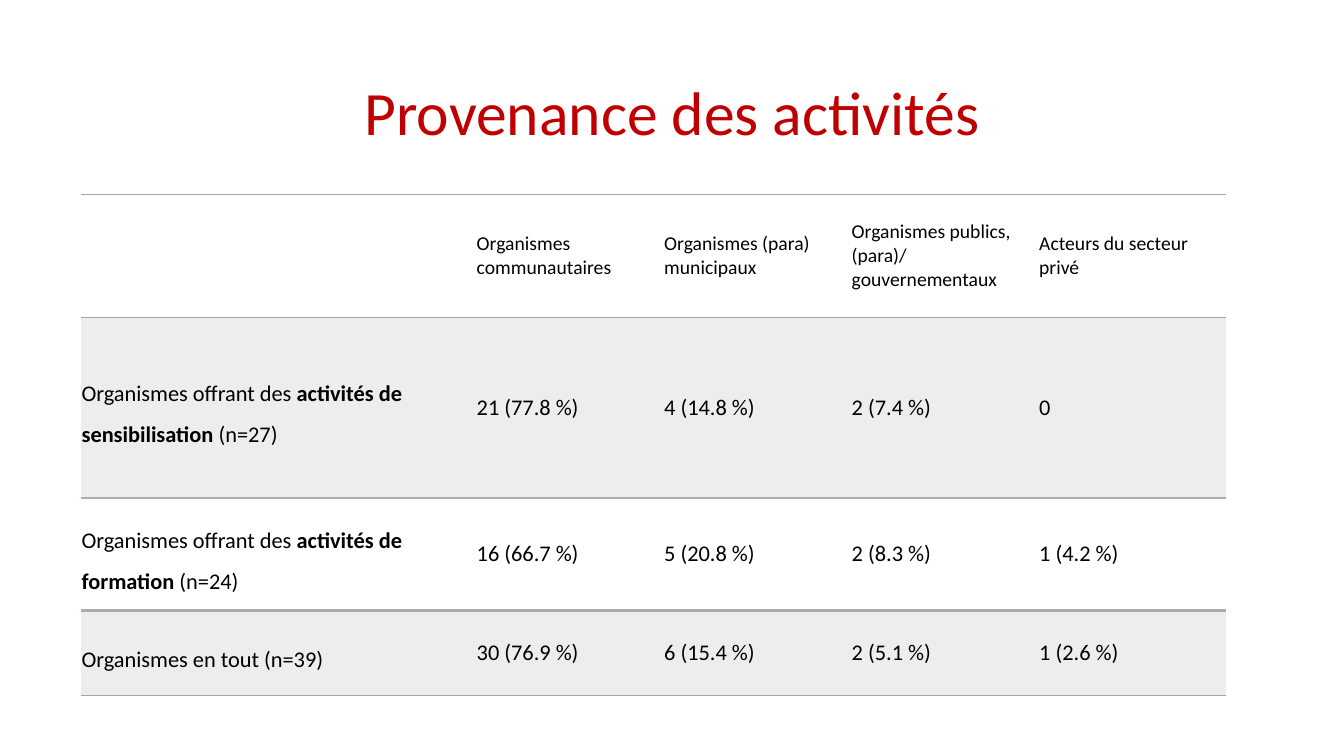
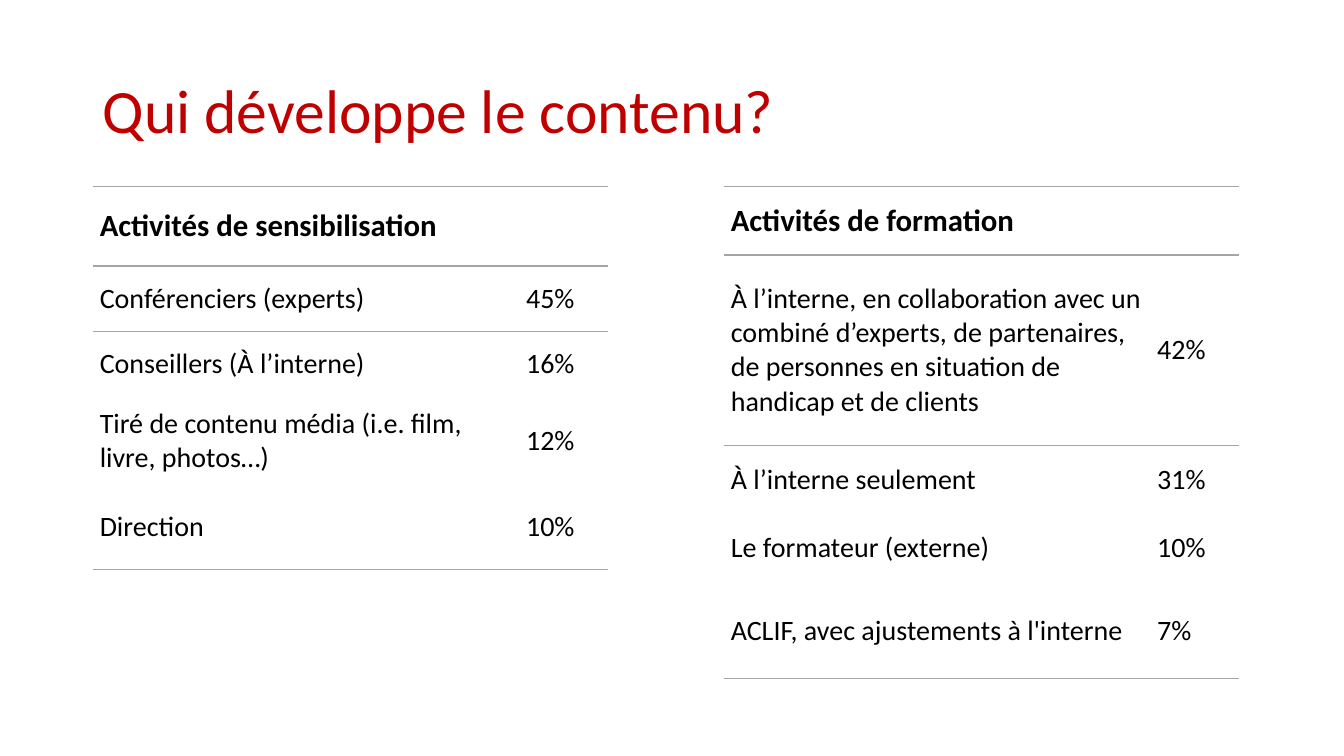
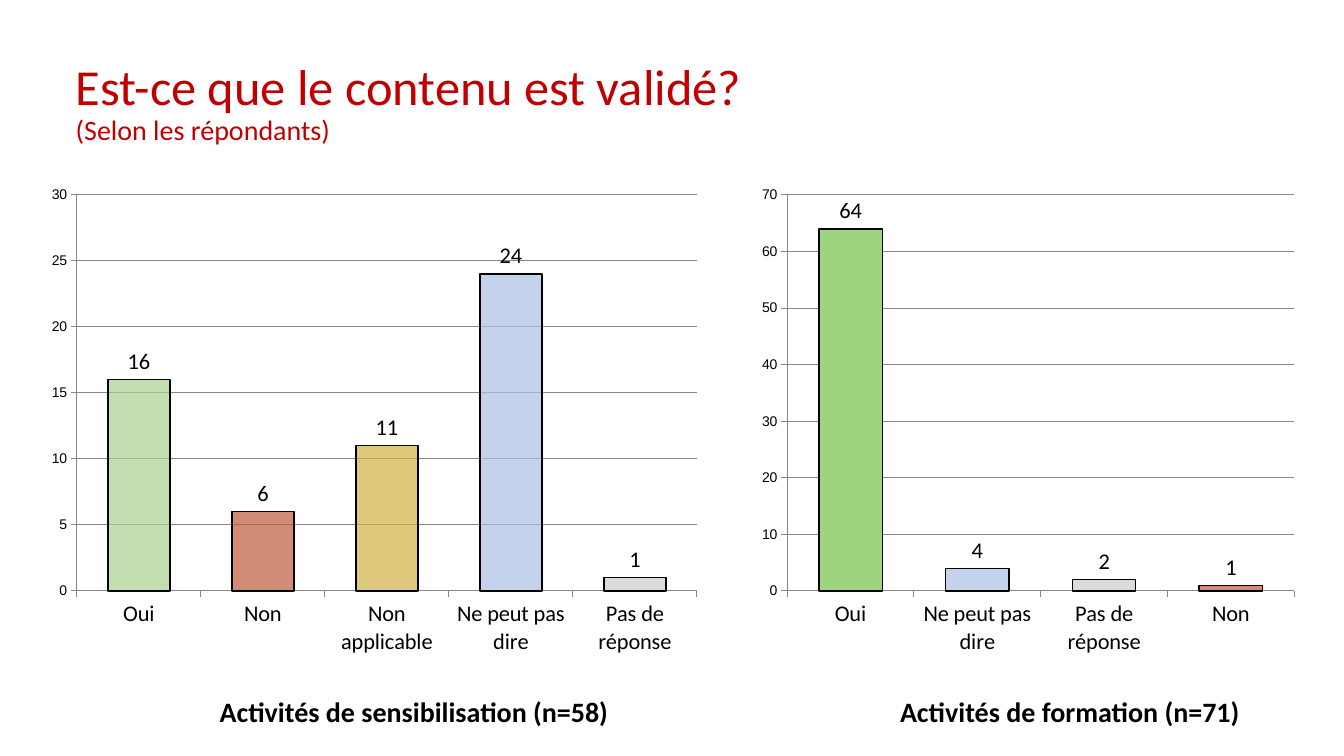
from lxml.etree import SubElement
from pptx import Presentation
from pptx.chart.data import CategoryChartData
from pptx.dml.color import RGBColor
from pptx.enum.chart import XL_CHART_TYPE, XL_LABEL_POSITION, XL_TICK_MARK
from pptx.enum.text import MSO_ANCHOR, MSO_AUTO_SIZE, PP_ALIGN
from pptx.oxml import parse_xml
from pptx.oxml.ns import nsdecls, qn
from pptx.util import Inches, Pt

WIDTH, HEIGHT = Inches(13.33), Inches(7.5)
COLUMN, ROW = WIDTH / 40, HEIGHT / 30

RED = RGBColor(0xC0, 0x00, 0x00)
BLACK = RGBColor(0x00, 0x00, 0x00)
RULE_GRAY = RGBColor(0xA5, 0xA5, 0xA5)
WARM_GRAY = RGBColor(0xAF, 0xAB, 0xAB)
BAND_GRAY = RGBColor(0xED, 0xED, 0xED)
AXIS_GRAY = RGBColor(0x87, 0x87, 0x87)
GREEN = RGBColor(0x9E, 0xD3, 0x7F)
SOFT_GREEN = RGBColor(0xA9, 0xD1, 0x8E)
BRICK = RGBColor(0xBF, 0x5C, 0x3B)
GOLD = RGBColor(0xCF, 0xB2, 0x45)
BLUE = RGBColor(0xAD, 0xC0, 0xE3)
SILVER = RGBColor(0xCC, 0xCC, 0xCC)

PLAIN_TABLE_STYLE = "{2D5ABB26-0587-4C30-8999-92F81FD0307C}"
THIN, THICK = (RULE_GRAY, 1), (WARM_GRAY, 2.25)


def write(frame, text, size=20, color=BLACK, bold=False, align=PP_ALIGN.LEFT, spacing=None):
    """Fill a text frame: newlines part paragraphs, ** toggles bold."""
    for index, line in enumerate(text.split("\n")):
        para = frame.add_paragraph() if index else frame.paragraphs[0]
        para.alignment, para.line_spacing = align, spacing
        for position, words in enumerate(line.split("**")):
            if words:
                span = para.add_run()
                span.text = words
                span.font.name, span.font.size = "Calibri", Pt(size)
                span.font.color.rgb = color
                span.font.bold = bold or position % 2 == 1


def add_ruled_table(page, left, top, widths, heights, rows, rules, head, body,
                    margin, banded=False, spacing=None):
    """Add a table whose horizontal rules are keyed by row edge, 0 being the top."""
    holder = page.shapes.add_table(
        len(rows), len(widths), int(left * COLUMN), int(top * ROW),
        int(sum(widths) * COLUMN), int(sum(heights) * ROW))
    next(holder.element.iter(qn("a:tableStyleId"))).text = PLAIN_TABLE_STYLE
    table = holder.table
    table.horz_banding = False
    for column, width in zip(table.columns, widths):
        column.width = int(width * COLUMN)
    for r, texts in enumerate(rows):
        table.rows[r].height = int(heights[r] * ROW)
        for c, text in enumerate(texts):
            cell = table.cell(r, c)
            cell.vertical_anchor = MSO_ANCHOR.MIDDLE
            cell.margin_left = cell.margin_right = Inches(margin)
            cell.margin_top = cell.margin_bottom = 0
            write(cell.text_frame, text, spacing=spacing if r and not c else None,
                  **(body if r else head))
            if banded and r % 2:
                cell.fill.solid()
                cell.fill.fore_color.rgb = BAND_GRAY
            else:
                cell.fill.background()
            properties = cell._tc.get_or_add_tcPr()
            for side, edge in (("lnB", r + 1), ("lnT", r)):
                if edge in rules:
                    color, points = rules[edge]
                    properties.insert(0, parse_xml(
                        f'<a:{side} {nsdecls("a")} w="{Pt(points)}"><a:solidFill>'
                        f'<a:srgbClr val="{color}"/></a:solidFill></a:{side}>'))


deck = Presentation()
deck.slide_width, deck.slide_height = WIDTH, HEIGHT

# Titles: left, top, width, height in grid units
titles = [
    ("Provenance des activités", 44, PP_ALIGN.CENTER, MSO_ANCHOR.BOTTOM,
     (1.74, 2.04, 36.54, 4.08)),
    ("Qui développe le contenu?", 44, PP_ALIGN.LEFT, MSO_ANCHOR.MIDDLE,
     (2.76, 1.6, 34.5, 5.8)),
    ("Est-ce que le contenu est validé?\n(Selon les répondants)", 36, PP_ALIGN.LEFT,
     MSO_ANCHOR.MIDDLE, (1.95, 1.24, 34.5, 5.8)),
]
pages = []
for text, size, align, anchor, (left, top, width, height) in titles:
    page = deck.slides.add_slide(deck.slide_layouts[5])
    title = page.shapes.title
    title.left, title.top = int(left * COLUMN), int(top * ROW)
    title.width, title.height = int(width * COLUMN), int(height * ROW)
    title.text_frame.auto_size = MSO_AUTO_SIZE.NONE
    title.text_frame.vertical_anchor = anchor
    write(title.text_frame, text, size=size, color=RED, align=align, spacing=0.9)
    pages.append(page)
origin_page, author_page, validation_page = pages
subtitle = validation_page.shapes.title.text_frame.paragraphs[1]
subtitle.runs[0].font.size = Pt(20)

# Where the activities come from
add_ruled_table(
    origin_page, 2.4, 7.72, [11.76] + [5.58] * 4, [4.88, 7.16, 4.48, 3.36],
    [["", "Organismes communautaires", "Organismes (para) municipaux",
      "Organismes publics, (para)/\ngouvernementaux", "Acteurs du secteur privé"],
     ["Organismes offrant des **activités de sensibilisation** (n=27)",
      "21 (77.8 %)", "4 (14.8 %)", "2 (7.4 %)", "0"],
     ["Organismes offrant des **activités de formation **(n=24)",
      "16 (66.7 %)", "5 (20.8 %)", "2 (8.3 %)", "1 (4.2 %)"],
     ["Organismes en tout (n=39)",
      "30 (76.9 %)", "6 (15.4 %)", "2 (5.1 %)", "1 (2.6 %)"]],
    {0: THIN, 1: THIN, 2: THICK, 3: THICK, 4: THIN},
    head={"size": 14}, body={"size": 16}, margin=0.01, banded=True, spacing=1.5)

# Who develops the content
author_tables = [
    (2.76, [3.16, 2.6, 2.6, 3.48, 3.36],
     [["Activités de sensibilisation", ""],
      ["Conférenciers (experts)", "45%"],
      ["Conseillers (À l’interne)", "16%"],
      ["Tiré de contenu média (i.e. film, livre, photos…)", "12%"],
      ["Direction", "10%"]]),
    (21.54, [2.72, 7.56, 2.72, 2.72, 3.8],
     [["Activités de formation", ""],
      ["À l’interne, en collaboration avec un combiné d’experts, de partenaires, "
       "de personnes en situation de handicap et de clients", "42%"],
      ["À l’interne seulement", "31%"],
      ["Le formateur (externe)", "10%"],
      ["ACLIF, avec ajustements à l'interne", "7%"]]),
]
for left, heights, rows in author_tables:
    add_ruled_table(author_page, left, 7.4, [12.69, 2.64], heights, rows,
                    {0: THIN, 1: THIN, 5: THIN},
                    head={"size": 22, "bold": True}, body={"size": 20}, margin=0.07)

# Whether the content is validated: bars are (category, value, colour, opacity)
charts = [
    (1.14, 20, 30, 5, 6.24, 12.3, "Activités de sensibilisation (n=58)",
     [("Oui", 16, SOFT_GREEN, 70), ("Non", 6, BRICK, 70), ("Non applicable", 11, GOLD, 70),
      ("Ne peut pas dire", 24, BLUE, 70), ("Pas de réponse", 1, SILVER, 70)]),
    (22.35, 16.5, 70, 10, 26.49, 10.83, "Activités de formation (n=71)",
     [("Oui", 64, GREEN, 100), ("Ne peut pas dire", 4, BLUE, 70),
      ("Pas de réponse", 2, SILVER, 70), ("Non", 1, BRICK, 70)]),
]
for left, width, maximum, step, caption_left, caption_width, caption, bars in charts:
    data = CategoryChartData()
    data.categories = [bar[0] for bar in bars]
    data.add_series("Series 1", [bar[1] for bar in bars])
    chart = validation_page.shapes.add_chart(
        XL_CHART_TYPE.COLUMN_CLUSTERED, int(left * COLUMN), int(7.04 * ROW),
        int(width * COLUMN), int(19.36 * ROW), data).chart
    chart.has_title = chart.has_legend = False
    chart.font.name, chart.font.size = "Arial", Pt(10)
    chart.font.color.rgb = BLACK

    for axis in (chart.category_axis, chart.value_axis):
        axis.major_tick_mark = XL_TICK_MARK.OUTSIDE
        axis.minor_tick_mark = XL_TICK_MARK.NONE
        axis.format.line.color.rgb = AXIS_GRAY
    axis.minimum_scale, axis.maximum_scale, axis.major_unit = 0, maximum, step
    axis.major_gridlines.format.line.color.rgb = AXIS_GRAY

    plot = chart.plots[0]
    plot.gap_width, plot.vary_by_categories = 100, False
    plot.has_data_labels = True
    labels = plot.data_labels
    labels.show_value, labels.position = True, XL_LABEL_POSITION.OUTSIDE_END
    for font in (labels.font, chart.category_axis.tick_labels.font):
        font.name, font.size = "Calibri", Pt(16)
        font.color.rgb = BLACK

    for index, (_, _, color, opacity) in enumerate(bars):
        look = plot.series[0].points[index].format
        look.fill.solid()
        look.fill.fore_color.rgb = color
        look.line.color.rgb, look.line.width = BLACK, Pt(1)
        if opacity < 100:
            properties = plot.series[0].points[index]._element.findall(
                qn("c:dPt"))[index].find(qn("c:spPr"))
            shade = properties.find(qn("a:solidFill")).find(qn("a:srgbClr"))
            SubElement(shade, qn("a:alpha"), val=str(opacity * 1000))

    box = validation_page.shapes.add_textbox(
        int(caption_left * COLUMN), int(27.36 * ROW),
        int(caption_width * COLUMN), int(1.76 * ROW))
    box.text_frame.word_wrap = False
    write(box.text_frame, caption, size=20, bold=True)

deck.save("out.pptx")
